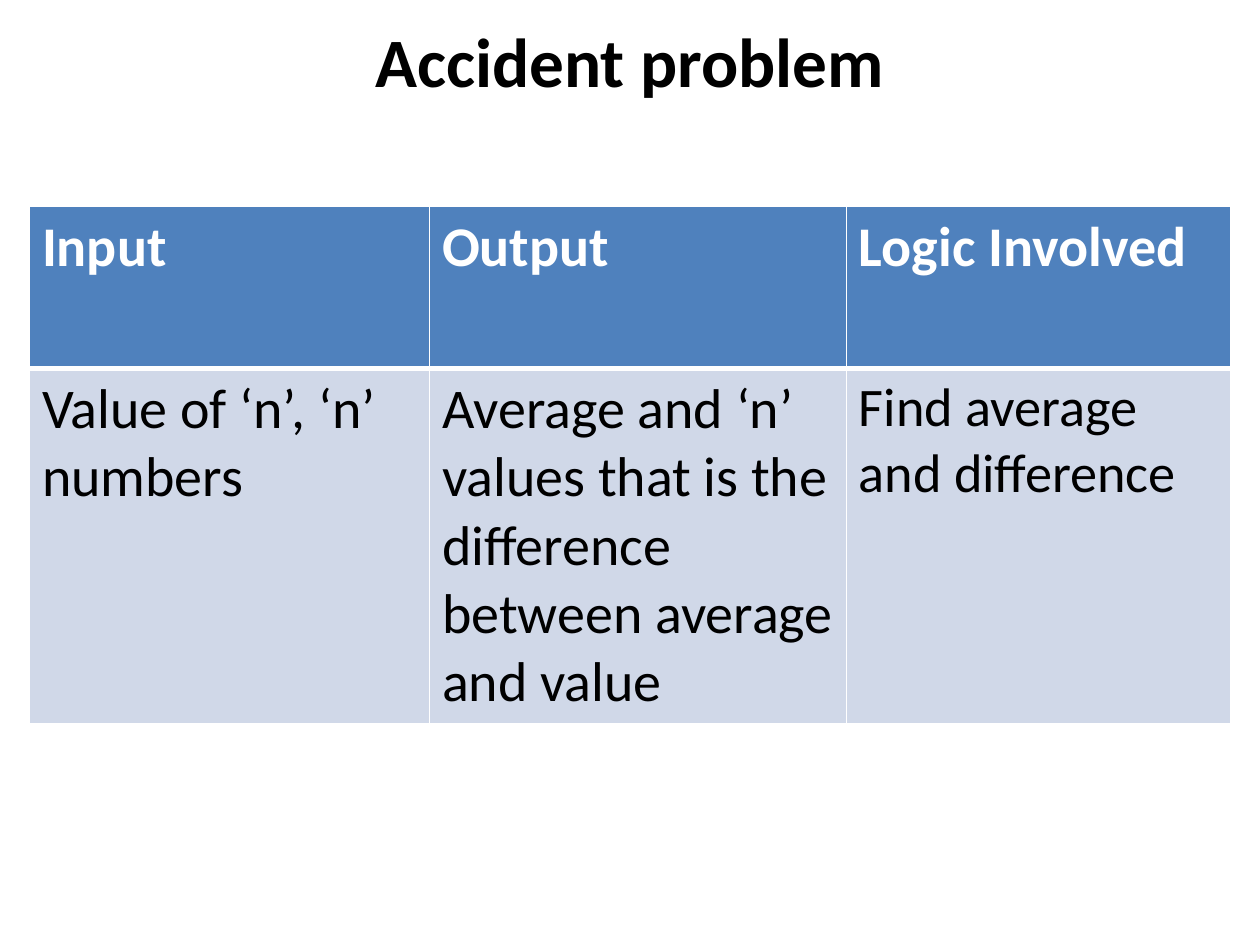
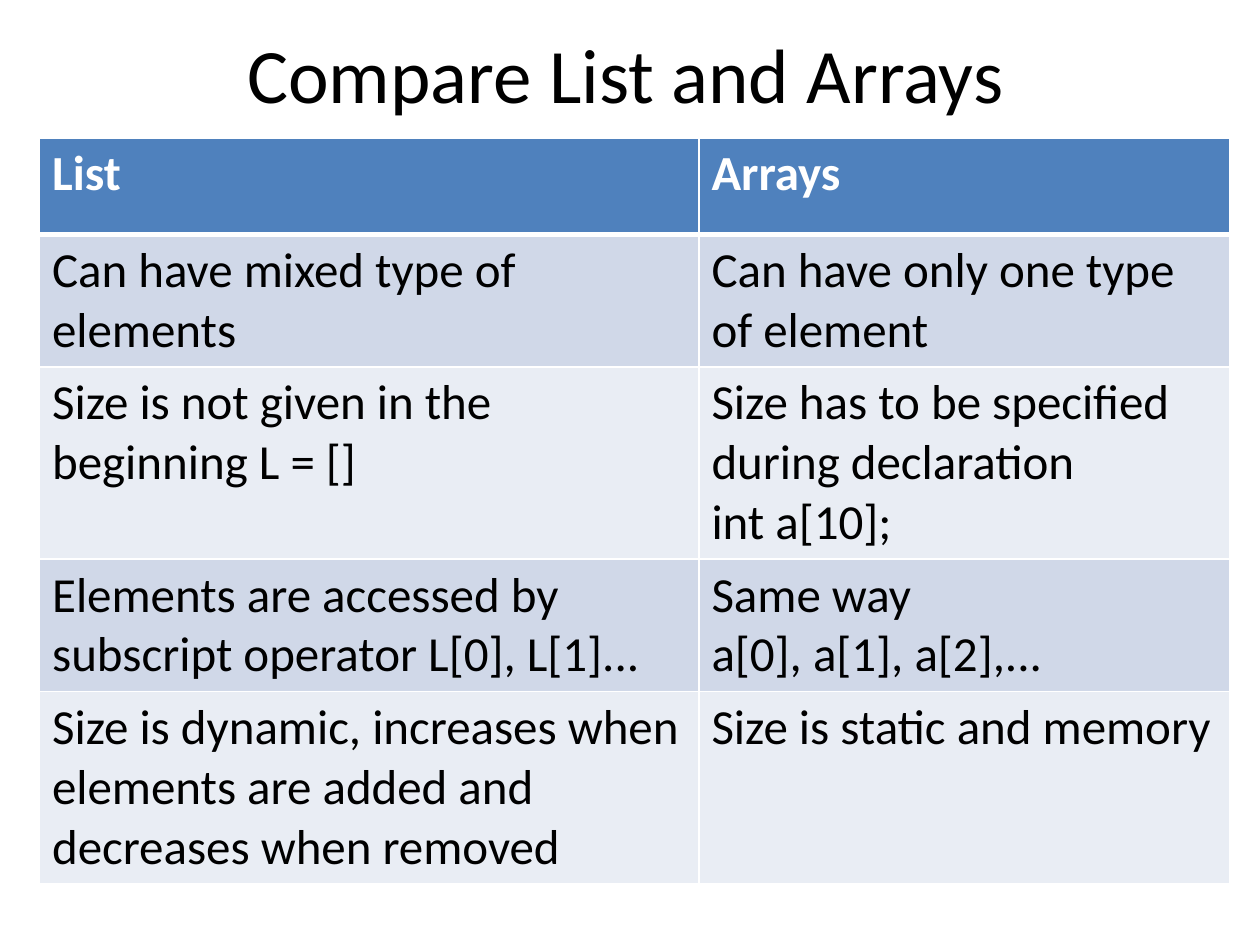
from lxml.etree import SubElement
from pptx import Presentation
from pptx.dml.color import RGBColor
from pptx.enum.text import MSO_ANCHOR, MSO_AUTO_SIZE, PP_ALIGN
from pptx.oxml import parse_xml
from pptx.oxml.ns import nsdecls, qn
from pptx.util import Pt

COLORS = {
    "text": "000000",
    "light": "FFFFFF",
    "header": "4F81BD",
    "odd_row": "D0D8E8",
    "even_row": "E9EDF4",
}
FONT = "Calibri"
TITLE_ONLY = 5


class Deck:
    """Holds the shared style and the slide being built."""

    def __init__(self):
        self.presentation = Presentation()
        self.presentation.slide_width = Pt(720)
        self.presentation.slide_height = Pt(540)
        self.slide = None

    def add_slide(self):
        layout = self.presentation.slide_layouts[TITLE_ONLY]
        self.slide = self.presentation.slides.add_slide(layout)

    def style_text(self, text_frame, size, color, bold, alignment):
        for paragraph in text_frame.paragraphs:
            paragraph.alignment = alignment
            for run in paragraph.runs:
                run.font.name = FONT
                run.font.size = Pt(size)
                run.font.bold = bold
                run.font.color.rgb = RGBColor.from_string(COLORS[color])

    def title(self, text, left, top, height, size, bold=False):
        shape = self.slide.shapes.title
        shape.left, shape.top = Pt(left), Pt(top)
        shape.width, shape.height = Pt(648), Pt(height)
        text_frame = shape.text_frame
        text_frame.text = text
        text_frame.auto_size = MSO_AUTO_SIZE.NONE
        text_frame.vertical_anchor = MSO_ANCHOR.MIDDLE
        self.style_text(text_frame, size, "text", bold, PP_ALIGN.CENTER)

    def cell_borders(self, cell, bottom_width):
        properties = cell._tc.get_or_add_tcPr()
        widths = {"lnL": 1, "lnR": 1, "lnT": 1, "lnB": bottom_width}
        for position, (side, width) in enumerate(widths.items()):
            line = parse_xml(f'<a:{side} {nsdecls("a")} w="{Pt(width)}"/>')
            fill = SubElement(line, qn("a:solidFill"))
            SubElement(fill, qn("a:srgbClr"), val=COLORS["light"])
            properties.insert(position, line)

    def table(self, rows, left, top, column_widths, row_heights, size, special_sizes=None):
        """Draw a header row and banded rows; special_sizes maps (row, column) to a size."""
        frame = self.slide.shapes.add_table(
            len(rows), len(column_widths), Pt(left), Pt(top),
            Pt(sum(column_widths)), Pt(sum(row_heights)))
        table = frame.table
        for column, width in zip(table.columns, column_widths):
            column.width = Pt(width)
        for row, height in zip(table.rows, row_heights):
            row.height = Pt(height)
        for row_index, texts in enumerate(rows):
            is_header = row_index == 0
            band = "header" if is_header else "odd_row" if row_index % 2 else "even_row"
            for column_index, text in enumerate(texts):
                cell = table.cell(row_index, column_index)
                cell.text_frame.text = text
                cell_size = (special_sizes or {}).get((row_index, column_index), size)
                self.style_text(cell.text_frame, cell_size,
                                "light" if is_header else "text", is_header, PP_ALIGN.LEFT)
                cell.fill.solid()
                cell.fill.fore_color.rgb = RGBColor.from_string(COLORS[band])
                self.cell_borders(cell, 3 if is_header else 1)


def main():
    deck = Deck()

    # Accident problem: input, output and logic
    deck.add_slide()
    deck.title("Accident problem", 36, 6, 56, 39.6, bold=True)
    problem_rows = [
        ("Input", "Output", "Logic Involved"),
        ("Value of ‘n’, ‘n’ numbers",
         "Average and ‘n’ values that is the difference between average and value",
         "Find average and difference"),
    ]
    deck.table(problem_rows, 16.8, 118, (228.6, 238.2, 219.6), (92.6, 54), 32,
               special_sizes={(1, 2): 31})

    # Lists compared with arrays
    deck.add_slide()
    deck.title("Compare List and Arrays", 33.6, 10, 63, 44)
    comparison_rows = [
        ("List", "Arrays"),
        ("Can have mixed type of elements", "Can have only one type of element"),
        ("Size is not given in the beginning L = []",
         "Size has to be specified during declaration\nint a[10];"),
        ("Elements are accessed by subscript operator L[0], L[1]...",
         "Same way\na[0], a[1], a[2],..."),
        ("Size is dynamic, increases when elements are added and decreases when removed",
         "Size is static and memory"),
    ]
    deck.table(comparison_rows, 22.6, 78.8, (376.8, 303.6),
               [55.2] * len(comparison_rows), 28)

    deck.presentation.save("out.pptx")


if __name__ == "__main__":
    main()
